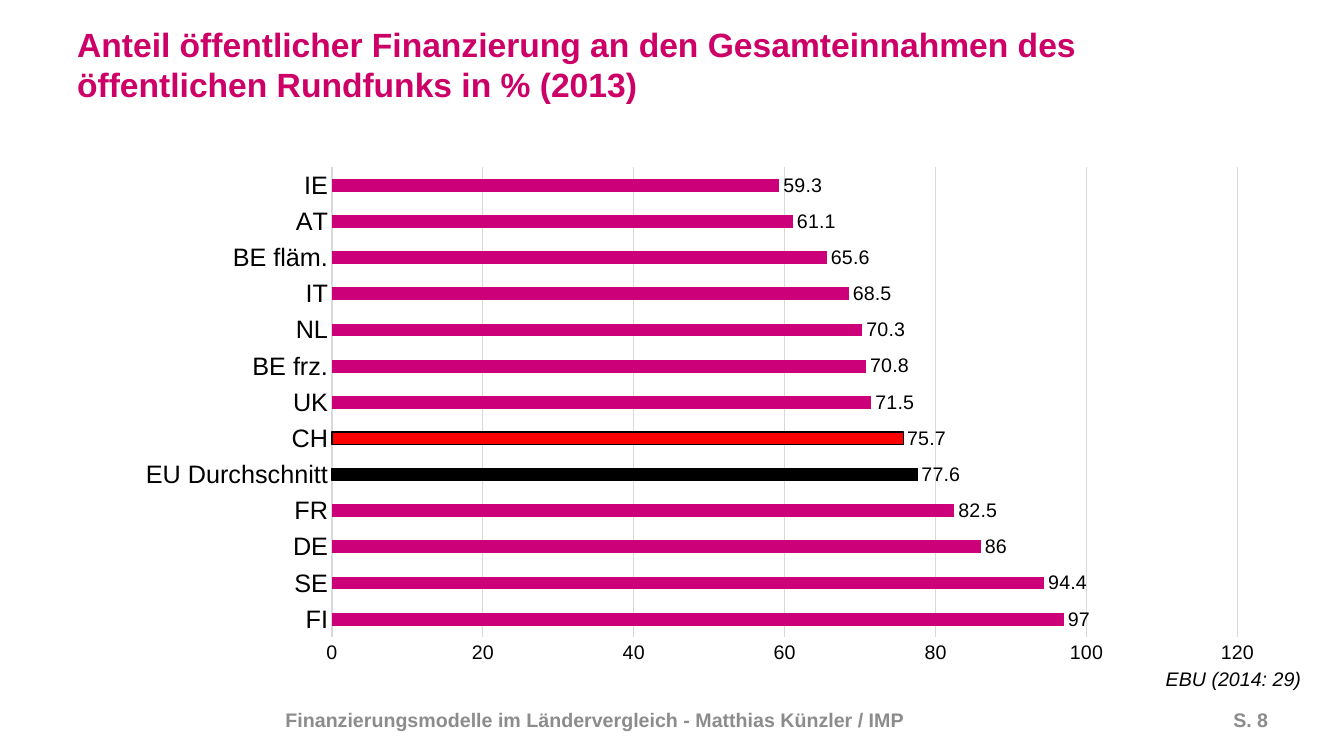
from lxml.etree import SubElement as Sub
from pptx import Presentation
from pptx.chart.data import CategoryChartData as Data
from pptx.dml.color import RGBColor as Rgb
from pptx.enum.chart import XL_CHART_TYPE as Kind, XL_LABEL_POSITION as Spot, XL_TICK_MARK as Tick
from pptx.enum.text import MSO_ANCHOR as Anchor, PP_ALIGN as Align
from pptx.oxml.ns import qn
from pptx.util import Inches, Pt

WIDE, HIGH = Inches(13.33), Inches(7.5)
FACE = "Arial"
HUES = {
    "title": "CC0066",
    "bar": "CC0078",
    "mean": "000000",
    "swiss": "FF0000",
    "text": "000000",
    "foot": "8C8C8C",
    "grid": "D9D9D9",
}
SHARES = {
    "FI": 97, "SE": 94.4, "DE": 86, "FR": 82.5, "EU Durchschnitt": 77.6,
    "CH": 75.7, "UK": 71.5, "BE frz.": 70.8, "NL": 70.3, "IT": 68.5,
    "BE fläm.": 65.6, "AT": 61.1, "IE": 59.3,
}
MARKED = {"EU Durchschnitt": "mean", "CH": "swiss"}
PLOT = {"x": 0.206, "y": 0.051, "w": 0.742, "h": 0.872}


def hue(name):
    return Rgb.from_string(HUES[name])


def place(x, y, w, h):
    return [round(part * side) for part, side in zip((x, y, w, h), (WIDE, HIGH) * 2)]


def style(font, size, tone="text", bold=False, slant=False):
    font.name, font.size = FACE, Pt(size)
    font.bold, font.italic = bold, slant
    font.color.rgb = hue(tone)


def add_text(slide, text, area, size, tone, bold=False, slant=False,
             align=Align.LEFT, anchor=Anchor.MIDDLE, wrap=True):
    frame = slide.shapes.add_textbox(*place(*area)).text_frame
    frame.word_wrap = wrap
    frame.vertical_anchor = anchor
    frame.text = text
    line = frame.paragraphs[0]
    line.alignment = align
    style(line.runs[0].font, size, tone, bold, slant)


def set_plot(chart):
    area = chart._chartSpace.chart.plotArea
    old = area.find(qn("c:layout"))
    if old is not None:
        area.remove(old)
    layout = Sub(area, qn("c:layout"))
    area.insert(0, layout)
    box = Sub(layout, qn("c:manualLayout"))
    Sub(box, qn("c:layoutTarget")).set("val", "inner")
    for side in "xy":
        Sub(box, qn(f"c:{side}Mode")).set("val", "edge")
    for side, part in PLOT.items():
        Sub(box, qn(f"c:{side}")).set("val", str(part))


def set_axis(axis, size):
    axis.major_tick_mark = axis.minor_tick_mark = Tick.NONE
    style(axis.tick_labels.font, size)


def set_line(line, tone):
    line.color.rgb = hue(tone)
    line.width = Pt(0.75)


def add_bars(slide, area):
    data = Data()
    data.categories = list(SHARES)
    data.add_series("Anteil in %", list(SHARES.values()))
    chart = slide.shapes.add_chart(Kind.BAR_CLUSTERED, *place(*area), data).chart
    chart.has_legend = chart.has_title = False
    style(chart.font, 10)
    set_plot(chart)

    lands, scale = chart.category_axis, chart.value_axis
    set_axis(lands, 18)
    set_line(lands.format.line, "grid")
    set_axis(scale, 14)
    scale.minimum_scale, scale.maximum_scale, scale.major_unit = 0, 120, 20
    scale.format.line.fill.background()
    scale.has_major_gridlines = True
    set_line(scale.major_gridlines.format.line, "grid")

    plot = chart.plots[0]
    plot.gap_width = 182
    plot.vary_by_categories = False
    plot.has_data_labels = True
    labels = plot.data_labels
    labels.show_value = True
    labels.position = Spot.OUTSIDE_END
    style(labels.font, 14)

    bars = plot.series[0]
    bars.invert_if_negative = False
    bars.format.fill.solid()
    bars.format.fill.fore_color.rgb = hue("bar")
    for spot, land in enumerate(SHARES):
        if land in MARKED:
            form = bars.points[spot].format
            form.fill.solid()
            form.fill.fore_color.rgb = hue(MARKED[land])
            set_line(form.line, "text")


def main():
    deck = Presentation()
    deck.slide_width, deck.slide_height = WIDE, HIGH
    slide = deck.slides.add_slide(deck.slide_layouts[6])
    add_text(slide, "Anteil öffentlicher Finanzierung an den Gesamteinnahmen des "
             "öffentlichen Rundfunks in % (2013)", (0.05, 0.04, 0.9, 0.09), 24, "title", bold=True)
    add_bars(slide, (0.06, 0.185, 0.908, 0.713))
    add_text(slide, "EBU (2014: 29)", (0.86, 0.875, 0.116, 0.045), 14, "text",
             slant=True, anchor=Anchor.TOP, wrap=False)
    add_text(slide, "Finanzierungsmodelle im Ländervergleich - Matthias Künzler / IMP",
             (0.205, 0.92, 0.602, 0.063), 14, "foot", bold=True)
    add_text(slide, "S. 8", (0.854, 0.92, 0.097, 0.063), 14, "foot",
             bold=True, align=Align.RIGHT)
    deck.save("out.pptx")


if __name__ == "__main__":
    main()
